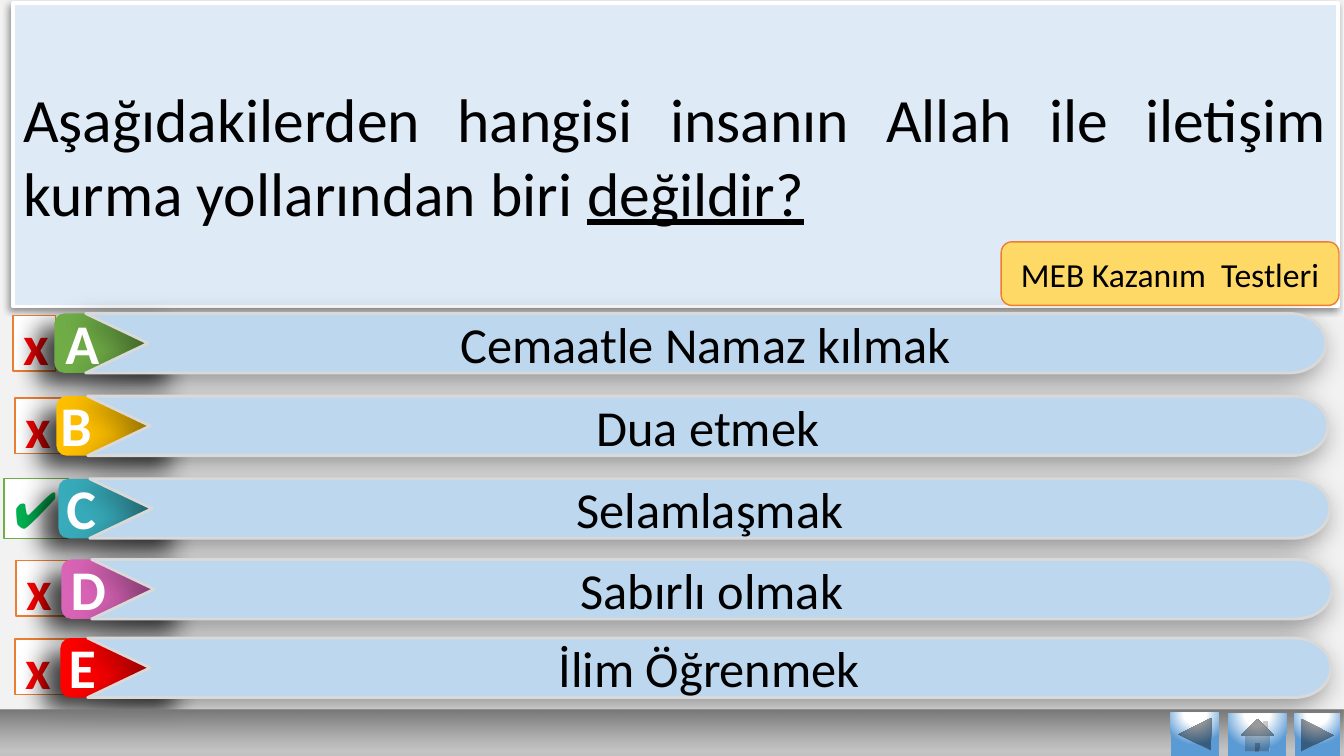
from math import cos, pi, sin

from pptx import Presentation
from pptx.dml.color import RGBColor
from pptx.enum.shapes import MSO_SHAPE as SHAPE
from pptx.enum.text import MSO_ANCHOR as ANCHOR, MSO_AUTO_SIZE as AUTO_SIZE, PP_ALIGN as ALIGN
from pptx.oxml import parse_xml
from pptx.oxml.ns import nsdecls, qn
from pptx.util import Inches, Pt

# Content
QUESTION = "Aşağıdakilerden hangisi insanın Allah ile iletişim kurma yollarından biri "
QUESTION_END = "değildir?"
SOURCE = "MEB Kazanım  Testleri"
# letter, answer, correct, tab colour, top, tab left, bar left, bar right, letter box left
ANSWERS = [
    ("A", "Cemaatle Namaz kılmak", False, "70AD47", 3.11, 0.54, 0.85, 13.15, 0.42),
    ("B", "Dua etmek", False, "FFC000", 3.93, 0.56, 0.87, 13.17, 0.36),
    ("C", "Selamlaşmak", True, "38ACBB", 4.75, 0.58, 0.89, 13.19, 0.41),
    ("D", "Sabırlı olmak", False, "DA64B7", 5.55, 0.61, 0.91, 13.21, 0.48),
    ("E", "İlim Öğrenmek", False, "FF0000", 6.33, 0.60, 0.87, 13.20, 0.42),
]
# left, top, width, height of each answer mark
MARKS = [
    (0.13, 3.13, 0.42, 0.55),
    (0.15, 3.95, 0.55, 0.55),
    (0.04, 4.75, 0.64, 0.59),
    (0.16, 5.56, 0.55, 0.55),
    (0.15, 6.34, 0.55, 0.55),
]
BUTTONS = [
    (SHAPE.ACTION_BUTTON_BACK_OR_PREVIOUS, 11.61, 7.07, 0.48),
    (SHAPE.ACTION_BUTTON_FORWARD_OR_NEXT, 12.84, 7.08, 0.45),
    (SHAPE.ACTION_BUTTON_HOME, 12.18, 7.08, 0.58),
]
ROW_HEIGHT = 0.59
NOTCH = 0.62
CAP = 0.36
CAP_STEPS = 24

FOOTER_STOPS = [(0, "C0C0C0", 100), (17, "B3B3B3", 70), (100, "777777", 100)]
FOOTER_SHADE = '<a:lin ang="16200000" scaled="0"/>'
BUTTON_STOPS = [(0, "FFFFFF", 100), (35, "FFFFFF", 100), (100, "5B9BD5", 100)]
BUTTON_SHADE = ('<a:path path="circle"><a:fillToRect l="50000" t="-80000" '
                'r="50000" b="180000"/></a:path>')


def color(value):
    return RGBColor.from_string(value)


def paint(shape, fill, line=None, width=1, shadow=None):
    """Set fill, outline and shadow (opacity, blur, distance, angle)."""
    shape.fill.solid()
    shape.fill.fore_color.rgb = color(fill)
    if line:
        shape.line.color.rgb = color(line)
        shape.line.width = Pt(width)
    else:
        shape.line.fill.background()
    shape.shadow.inherit = False
    if shadow:
        opacity, blur, distance, angle = shadow
        effects = shape.element.spPr.find(qn("a:effectLst"))
        effects.append(parse_xml(
            f'<a:outerShdw {nsdecls("a")} blurRad="{Pt(blur)}" dist="{Pt(distance)}" '
            f'dir="{angle * 60000}" algn="ctr" rotWithShape="0"><a:srgbClr val="000000">'
            f'<a:alpha val="{opacity * 1000}"/></a:srgbClr></a:outerShdw>'))


def shade(shape, stops, shading):
    """Replace the solid fill by a gradient."""
    marks = "".join(
        f'<a:gs pos="{position * 1000}"><a:srgbClr val="{value}">'
        f'<a:alpha val="{opacity * 1000}"/></a:srgbClr></a:gs>'
        for position, value, opacity in stops)
    properties = shape.element.spPr
    properties.replace(properties.find(qn("a:solidFill")), parse_xml(
        f'<a:gradFill {nsdecls("a")} rotWithShape="1"><a:gsLst>{marks}</a:gsLst>'
        f'{shading}</a:gradFill>'))


def write(shape, text, size, fill="000000", bold=False, underline=False,
          align=ALIGN.CENTER, anchor=ANCHOR.MIDDLE):
    """Add a run to the first paragraph of a shape."""
    frame = shape.text_frame
    frame.word_wrap = True
    frame.vertical_anchor = anchor
    paragraph = frame.paragraphs[0]
    paragraph.alignment = align
    run = paragraph.add_run()
    run.text = text
    run.font.name = "Calibri"
    run.font.size = Pt(size)
    run.font.bold = bold
    run.font.underline = underline
    run.font.color.rgb = color(fill)
    return run


def add_shape(slide, kind, left, top, width, height):
    return slide.shapes.add_shape(kind, *map(Inches, (left, top, width, height)))


def add_bar(slide, left, right, top):
    """Answer bar: notched left end, rounded right end."""
    middle, half = top + ROW_HEIGHT / 2, ROW_HEIGHT / 2
    angles = [pi * (step / CAP_STEPS - 0.5) for step in range(CAP_STEPS + 1)]
    points = [(right - CAP + CAP * cos(angle), middle + half * sin(angle)) for angle in angles]
    points += [(left, top + ROW_HEIGHT), (left + NOTCH, middle)]
    builder = slide.shapes.build_freeform(Inches(left), Inches(top))
    builder.add_line_segments([(Inches(x), Inches(y)) for x, y in points], close=True)
    return builder.convert_to_shape()


def add_answer(slide, letter, answer, tab_color, top, tab_left, left, right, letter_left):
    tab = add_shape(slide, SHAPE.ROUNDED_RECTANGLE, tab_left, top, 1.31, ROW_HEIGHT)
    paint(tab, tab_color, shadow=(75, 18, 15, 143))
    bar = add_bar(slide, left, right, top)
    paint(bar, "BDD7EE", "D9D9D9", 2, shadow=(40, 20, 7, 135))
    write(bar, answer, 36)
    box = slide.shapes.add_textbox(*map(Inches, (letter_left, top - 0.1, 0.79, 0.77)))
    run = write(box, letter, 40, "FEFEFE", bold=True, anchor=ANCHOR.TOP)
    box.text_frame.auto_size = AUTO_SIZE.SHAPE_TO_FIT_TEXT
    properties = run.font._element
    properties.set("spc", "50")
    properties.insert(0, parse_xml(
        f'<a:ln {nsdecls("a")} w="{Pt(0.75)}"><a:solidFill><a:srgbClr val="FFFFFF"/>'
        f'</a:solidFill></a:ln>'))


def main():
    presentation = Presentation()
    presentation.slide_width, presentation.slide_height = Inches(13.33), Inches(7.5)
    slide = presentation.slides.add_slide(presentation.slide_layouts[5])
    slide.background.fill.solid()
    slide.background.fill.fore_color.rgb = color("F2F2F2")

    # Question
    title = slide.shapes.title
    title.left, title.top, title.width, title.height = map(Inches, (0.13, 0.03, 13.14, 3.01))
    paint(title, "DEEBF7", "FFFFFF", 2.5, shadow=(40, 4, 3, 135))
    write(title, QUESTION, 44, align=ALIGN.JUSTIFY)
    write(title, QUESTION_END, 44, underline=True, align=ALIGN.JUSTIFY)
    title.text_frame.auto_size = AUTO_SIZE.NONE

    # Right and wrong marks
    for (_, _, correct, *_), place in zip(ANSWERS, MARKS):
        mark = add_shape(slide, SHAPE.RECTANGLE, *place)
        paint(mark, "FFFFFF", "70AD47" if correct else "ED7D31")
        if correct:
            write(mark, "✔", 36, "00B050", align=ALIGN.LEFT)
        else:
            write(mark, "x", 40, "FF0000", bold=True, align=ALIGN.LEFT)

    # Answers
    for letter, answer, _, *look in ANSWERS:
        add_answer(slide, letter, answer, *look)

    # Footer with navigation buttons
    footer = add_shape(slide, SHAPE.RECTANGLE, 0, 7.04, 13.33, 0.49)
    paint(footer, "C0C0C0")
    shade(footer, FOOTER_STOPS, FOOTER_SHADE)
    for kind, left, top, width in BUTTONS:
        button = add_shape(slide, kind, left, top, width, 0.43)
        paint(button, "5B9BD5")
        shade(button, BUTTON_STOPS, BUTTON_SHADE)

    # Source label
    label = add_shape(slide, SHAPE.ROUNDED_RECTANGLE, 9.93, 2.4, 3.35, 0.63)
    paint(label, "FFD966", "ED7D31")
    write(label, SOURCE, 24)

    presentation.save("out.pptx")


if __name__ == "__main__":
    main()
